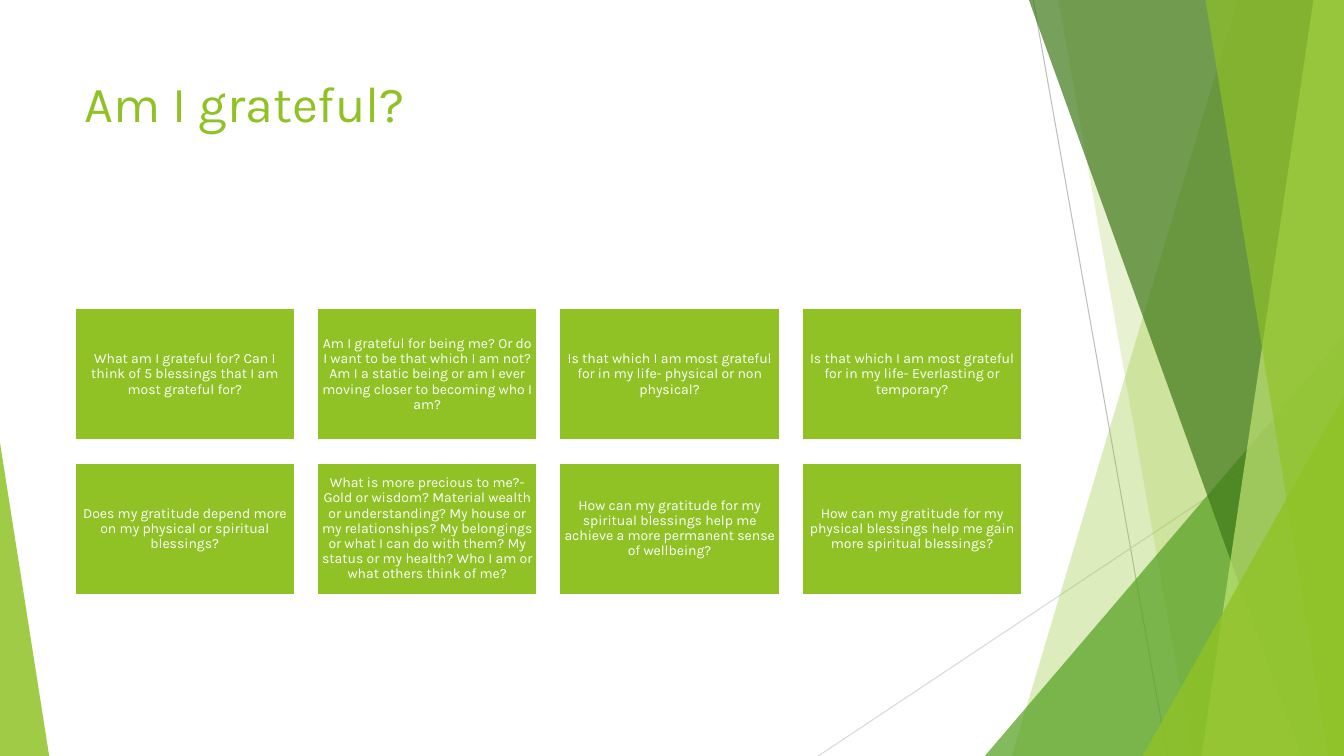
from lxml import etree
from pptx import Presentation
from pptx.dml.color import RGBColor
from pptx.enum.shapes import MSO_CONNECTOR, MSO_SHAPE
from pptx.enum.text import MSO_ANCHOR, MSO_AUTO_SIZE, PP_ALIGN
from pptx.oxml.ns import qn
from pptx.util import Cm, Pt

STRAIGHT = MSO_CONNECTOR.STRAIGHT
RECT, TRI = MSO_SHAPE.RECTANGLE, MSO_SHAPE.ISOSCELES_TRIANGLE
TOP, MID = MSO_ANCHOR.TOP, MSO_ANCHOR.MIDDLE
LEFT, CENTER = PP_ALIGN.LEFT, PP_ALIGN.CENTER
NO_FIT = MSO_AUTO_SIZE.NONE

LIME = RGBColor(0x90, 0xC2, 0x26)
PALE = RGBColor(0xC0, 0xE4, 0x74)
GREEN = RGBColor(0x54, 0xA0, 0x21)
DARK = RGBColor(0x3F, 0x78, 0x19)
WHITE = RGBColor(0xFF, 0xFF, 0xFF)
GRAY = RGBColor(0xBF, 0xBF, 0xBF)
SILVER = RGBColor(0xD9, 0xD9, 0xD9)

FONT = "Karla"
WIDE, HIGH = 33.87, 19.05

CARDS = [
    "What am I grateful for? Can I think of 5 blessings that I am most grateful for?",
    "Am I grateful for being me? Or do I want to be that which I am not? "
    "Am I a static being or am I ever moving closer to becoming who I am?",
    "Is that which I am most grateful for in my life- physical or non physical?",
    "Is that which I am most grateful for in my life- Everlasting or temporary?",
    "Does my gratitude depend more on my physical or spiritual blessings?",
    "What is more precious to me?- Gold or wisdom? Material wealth or understanding? "
    "My house or my relationships? My belongings or what I can do with them? "
    "My status or my health? Who I am or what others think of me?",
    "How can my gratitude for my spiritual blessings help me achieve "
    "a more permanent sense of wellbeing?",
    "How can my gratitude for my physical blessings help me gain more spiritual blessings?",
]


def write(shape, text, size, color, align=LEFT, anchor=TOP, inset=None, space=1.0):
    frame = shape.text_frame
    frame.text = text
    frame.word_wrap = True
    frame.auto_size = NO_FIT
    frame.vertical_anchor = anchor
    if inset is not None:
        frame.margin_left = frame.margin_right = Cm(inset)
        frame.margin_top = frame.margin_bottom = Cm(inset)
    para = frame.paragraphs[0]
    para.alignment = align
    para.line_spacing = space
    font = para.runs[0].font
    font.name = FONT
    font.size = Pt(size)
    font.color.rgb = color


def tint(shape, color, alpha):
    shape.shadow.inherit = False
    shape.fill.solid()
    shape.fill.fore_color.rgb = color
    shape.line.fill.background()
    tone = shape.element.spPr.find(qn("a:solidFill"))[0]
    etree.SubElement(tone, qn("a:alpha")).set("val", str(alpha * 1000))


def add_line(slide, x1, y1, x2, y2, color):
    line = slide.shapes.add_connector(STRAIGHT, Cm(x1), Cm(y1), Cm(x2), Cm(y2))
    line.line.color.rgb = color
    line.line.width = Pt(0.75)
    etree.SubElement(line.element.spPr, qn("a:effectLst"))


def add_band(slide, head, foot, color, alpha):
    form = slide.shapes.build_freeform(Cm(head), 0)
    form.add_line_segments(
        [(Cm(WIDE), 0), (Cm(WIDE), Cm(HIGH)), (Cm(foot), Cm(HIGH))])
    tint(form.convert_to_shape(), color, alpha)


def add_wedge(slide, left, top, width, peak, color, alpha):
    wedge = slide.shapes.add_shape(
        TRI, Cm(left), Cm(top), Cm(width), Cm(HIGH - top))
    wedge.adjustments[0] = peak
    tint(wedge, color, alpha)


def add_decor(slide):
    add_line(slide, 26.04, 0, 29.42, HIGH, GRAY)
    add_line(slide, WIDE, 10.24, 20.62, HIGH, SILVER)
    add_band(slide, 31.19, 25.5, LIME, 30)
    add_band(slide, 26.67, 30.05, LIME, 20)
    add_wedge(slide, 24.82, 8.46, 9.05, 1, GREEN, 72)
    add_band(slide, 25.93, 32.79, DARK, 70)
    add_band(slide, 33.1, 30.28, PALE, 70)
    add_band(slide, 30.38, 33.48, LIME, 65)
    add_wedge(slide, 28.8, 9.98, 5.07, 1, LIME, 80)
    add_wedge(slide, 0, 11.15, 1.24, 0, LIME, 85)


def add_title(slide, text, left, top, width, height):
    title = slide.shapes.title
    title.left, title.top = Cm(left), Cm(top)
    title.width, title.height = Cm(width), Cm(height)
    write(title, text, 36, LIME)
    title.element.getparent().append(title.element)


def add_cards(slide, texts, left, top, width, cols=4):
    wide = width / (cols + 0.1 * (cols - 1))
    high, gap = wide * 0.6, wide * 0.1
    for i, text in enumerate(texts):
        row, col = divmod(i, cols)
        card = slide.shapes.add_shape(
            RECT, Cm(left + col * (wide + gap)), Cm(top + row * (high + gap)),
            Cm(wide), Cm(high))
        card.shadow.inherit = False
        card.fill.solid()
        card.fill.fore_color.rgb = LIME
        card.line.color.rgb = WHITE
        card.line.width = Pt(1.5)
        write(card, text, 10, WHITE, align=CENTER, anchor=MID, inset=0.1, space=0.9)


def main():
    deck = Presentation()
    deck.slide_width, deck.slide_height = Cm(WIDE), Cm(HIGH)
    slide = deck.slides.add_slide(deck.slide_layouts[5])
    add_decor(slide)
    add_title(slide, "Am I grateful?", 1.88, 1.7, 23.88, 3.66)
    add_cards(slide, CARDS, 1.88, 7.77, 23.88)
    deck.save("out.pptx")


if __name__ == "__main__":
    main()
